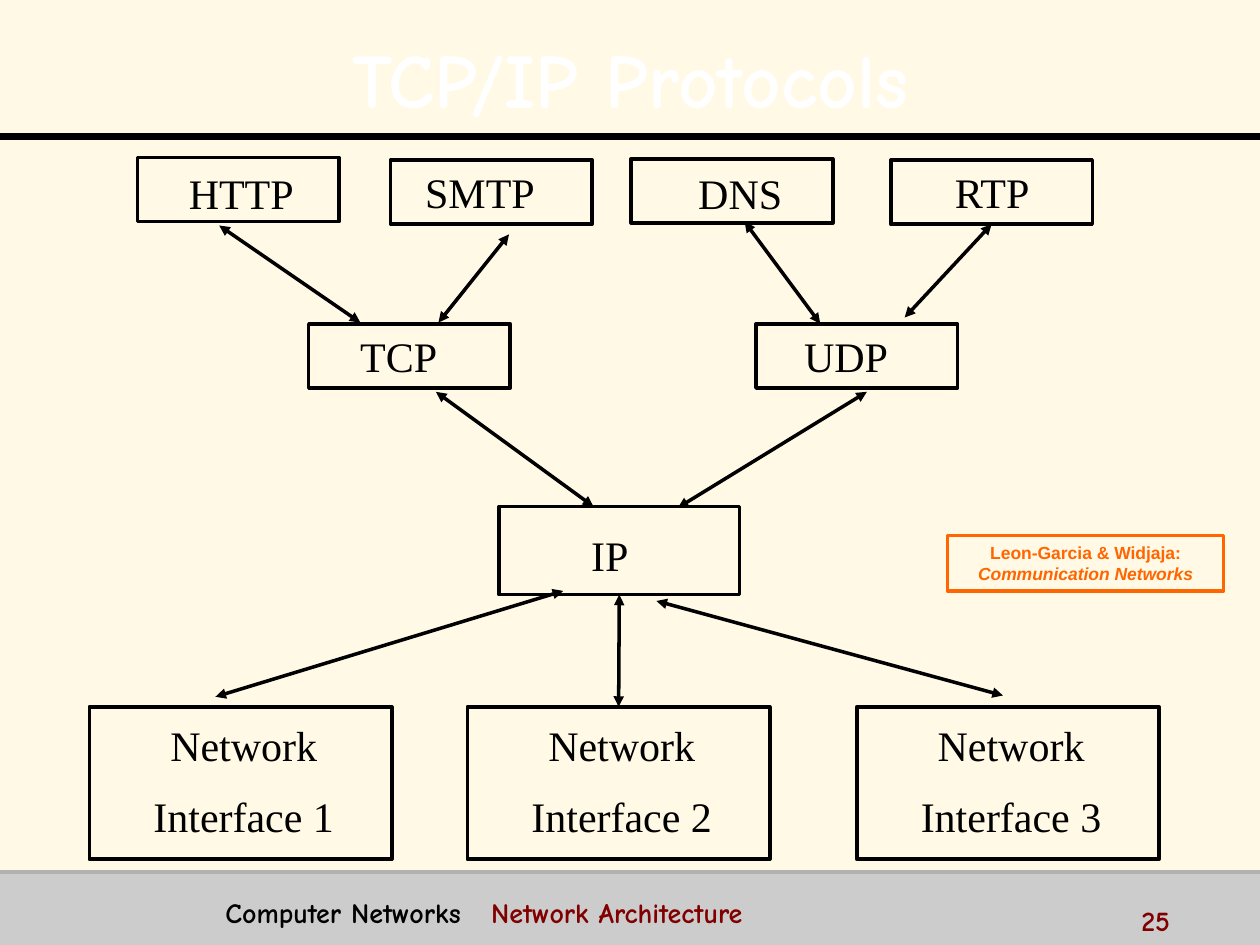
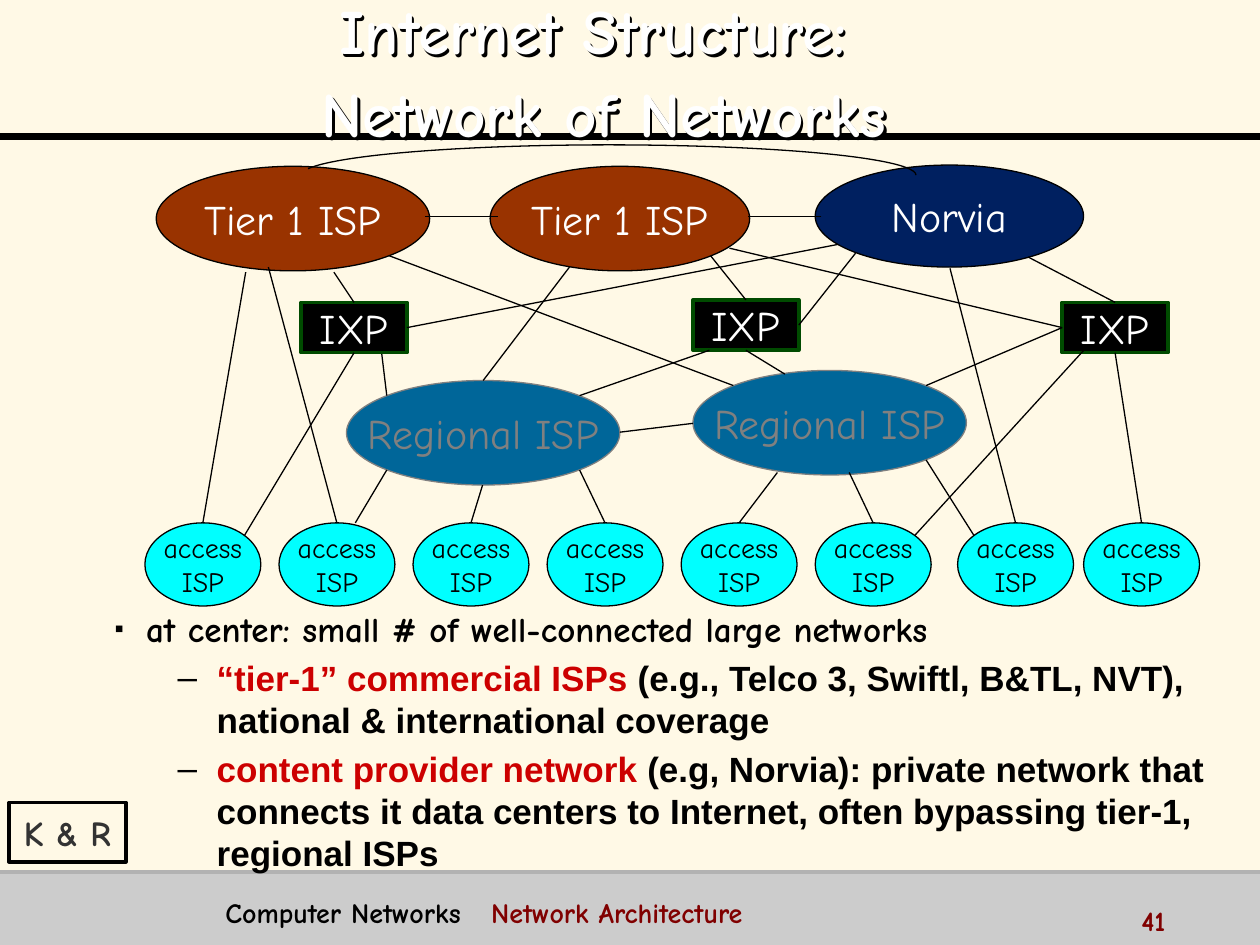
"""Build two computer networks slides: the TCP/IP protocols and the internet structure."""
from dataclasses import dataclass, replace

from lxml import etree
from pptx import Presentation
from pptx import util as u
from pptx.dml.color import RGBColor
from pptx.enum import shapes, text
from pptx.oxml.ns import qn

COLUMNS, ROWS = 100, 75
SLIDE_WIDTH, SLIDE_HEIGHT = u.Inches(10), u.Inches(7.5)
ALIGN, ANCHOR = text.PP_ALIGN, text.MSO_ANCHOR
RECTANGLE, ELLIPSE = shapes.MSO_SHAPE.RECTANGLE, shapes.MSO_SHAPE.OVAL
SIDES = {"top": 0, "left": 1, "bottom": 2, "right": 3}


@dataclass(frozen=True)
class Style:
    """Look of a text run."""
    size: float
    color: str = "000000"
    font: str = "Comic Neue"
    bold: bool = False
    italic: bool = False


@dataclass(frozen=True)
class Theme:
    """Colours and text styles that the slides share."""
    background: str = "FFF9E6"
    black: str = "000000"
    band: str = "CCCCCC"
    band_edge: str = "B2B2B2"
    orange: str = "FF6600"
    tier: str = "993300"
    content: str = "002060"
    regional: str = "006699"
    regional_edge: str = "808080"
    exchange_edge: str = "004B00"
    access: str = "00FFFF"
    title: Style = Style(44, "FFFFFF", bold=True)
    footer: Style = Style(16, bold=True)
    topic: Style = Style(16, "800000", bold=True)
    protocol: Style = Style(24, font="Times New Roman")
    citation: Style = Style(10, "FF6600", "Arial", True)
    provider: Style = Style(24, "FFFFFF")
    small: Style = Style(16)
    source: Style = Style(20, "333333", bold=True)
    point: Style = Style(20, bold=True)
    detail: Style = Style(20, font="Arial", bold=True)
    keyword: Style = Style(20, "CC0000", "Arial", True)


THEME = Theme()


@dataclass(frozen=True)
class Box:
    """Area in grid columns and rows."""
    left: float
    top: float
    width: float
    height: float

    def inner(self, left, top, width, height):
        """Return an area placed relative to this one."""
        return Box(self.left + left, self.top + top, width, height)

    def emu(self):
        """Return left, top, width and height as slide lengths."""
        return (*grid_point(self.left, self.top), *grid_point(self.width, self.height))


def grid_point(column, row):
    """Turn a column and a row into slide lengths."""
    return u.Emu(round(column * SLIDE_WIDTH / COLUMNS)), u.Emu(round(row * SLIDE_HEIGHT / ROWS))


def rgb(color):
    """Return a colour object for a hex string."""
    return RGBColor.from_string(color)


def format_run(run, style):
    """Apply a text style to a run."""
    font = run.font
    font.size, font.name = u.Pt(style.size), style.font
    font.bold, font.italic = style.bold, style.italic
    font.color.rgb = rgb(style.color)


def write(frame, lines, style, align=ALIGN.CENTER, anchor=ANCHOR.MIDDLE, wrap=False, gap=0):
    """Fill a text frame with equally styled lines."""
    frame.text = "\n".join(lines)
    frame.auto_size = text.MSO_AUTO_SIZE.NONE
    frame.word_wrap, frame.vertical_anchor = wrap, anchor
    for index, paragraph in enumerate(frame.paragraphs):
        paragraph.alignment = align
        paragraph.space_before = u.Pt(gap if index else 0)
        for run in paragraph.runs:
            format_run(run, style)


def add_runs(paragraph, parts):
    """Append (words, style) parts to a paragraph."""
    for words, style in parts:
        run = paragraph.add_run()
        run.text = words
        format_run(run, style)


def add_label(slide, box, lines, style, **options):
    """Add a text box."""
    shape = slide.shapes.add_textbox(*box.emu())
    write(shape.text_frame, lines, style, **options)
    return shape


def add_figure(slide, kind, box, fill=None, line=THEME.black, weight=2.0):
    """Add a flat preset shape."""
    shape = slide.shapes.add_shape(kind, *box.emu())
    shape.shadow.inherit = False
    if fill:
        shape.fill.solid()
        shape.fill.fore_color.rgb = rgb(fill)
    else:
        shape.fill.background()
    if line:
        shape.line.color.rgb = rgb(line)
        shape.line.width = u.Pt(weight)
    else:
        shape.line.fill.background()
    return shape


def add_line(slide, box, start, end, nodes=None, color=THEME.black, weight=0.75, arrows=False):
    """Connect two ends, each a point or the words 'node side'."""
    ends = [(0, 0) if isinstance(target, str) else grid_point(box.left + target[0], box.top + target[1])
            for target in (start, end)]
    connector = slide.shapes.add_connector(shapes.MSO_CONNECTOR.STRAIGHT, *ends[0], *ends[1])
    for target, join in ((start, connector.begin_connect), (end, connector.end_connect)):
        if isinstance(target, str):
            name, side = target.rsplit(" ", 1)
            join(nodes[name], SIDES[side])
    connector.line.color.rgb = rgb(color)
    connector.line.width = u.Pt(weight)
    properties = connector._element.spPr
    if arrows:
        for tag in ("a:headEnd", "a:tailEnd"):
            etree.SubElement(properties.find(qn("a:ln")), qn(tag), type="triangle")
    etree.SubElement(properties, qn("a:effectLst"))


def place_placeholder(slide, placeholder, box):
    """Move a placeholder to its box, in front of what is drawn so far."""
    placeholder.left, placeholder.top, placeholder.width, placeholder.height = box.emu()
    slide.shapes._spTree.append(placeholder._element)


def place_title(slide, box, words, style, anchor, shadow=False):
    """Move and format the title placeholder."""
    title = slide.shapes.title
    place_placeholder(slide, title, box)
    write(title.text_frame, [words], style, anchor=anchor, wrap=True)
    title.text_frame.paragraphs[0].line_spacing = 1.1
    if shadow:
        title.fill.background()
        title.line.fill.background()
        effects = etree.SubElement(title._element.spPr, qn("a:effectLst"))
        outer = etree.SubElement(effects, qn("a:outerShdw"), dist="25400", dir="2700000",
                                 algn="tl", rotWithShape="0")
        etree.SubElement(outer, qn("a:srgbClr"), val=THEME.black)


def place_frame(slide, box):
    """Draw the background, footer band and rules."""
    slide.background.fill.solid()
    slide.background.fill.fore_color.rgb = rgb(THEME.background)
    add_figure(slide, RECTANGLE, box.inner(0, 69.2, box.width, 5.8), THEME.band, None)
    for row, color, weight in ((10.8, THEME.black, 4), (69.2, THEME.band_edge, 2)):
        add_line(slide, box, (0, row), (box.width, row), color=color, weight=weight)


def place_footer(slide, box, number):
    """Write the course, the topic and the slide number."""
    add_label(slide, box.inner(74.3, 0.6, 10, 2.5), [number], THEME.topic,
              align=ALIGN.LEFT, anchor=ANCHOR.TOP, wrap=True)
    shape = add_label(slide, box.inner(1.6, 0, 71.2, 3.1), [""], THEME.footer,
                      align=ALIGN.LEFT, anchor=ANCHOR.TOP, wrap=True)
    paragraph = shape.text_frame.paragraphs[0]
    tabs = etree.SubElement(paragraph._p.get_or_add_pPr(), qn("a:tabLst"))
    etree.SubElement(tabs, qn("a:tab"), pos=str(u.Inches(2.11)), algn="l")
    add_runs(paragraph, [("Computer Networks\t", THEME.footer),
                         ("Network Architecture", THEME.topic)])


def place_protocols(slide, box):
    """Draw the protocol stack; each label has its own centre."""
    nodes = {}
    small = (16, 5.1)
    for name, left, top, (width, height), center, label_top in (
            ("HTTP", 5.9, 2.5, small, 14.15, 2.8), ("SMTP", 26, 2.7, small, 33.1, 2.7),
            ("DNS", 45.1, 2.6, small, 53.75, 2.8), ("RTP", 65.7, 2.7, small, 73.75, 2.7),
            ("TCP", 19.5, 15.7, small, 26.65, 15.7), ("UDP", 55, 15.7, small, 62.15, 15.7),
            ("IP", 34.6, 30.2, (19.1, 7), 43.4, 31.5)):
        nodes[name] = add_figure(slide, RECTANGLE, box.inner(left, top, width, height))
        add_label(slide, box.inner(center - 5.5, label_top, 11, 5), [name], THEME.protocol)
    for number, left in enumerate((2.1, 32.1, 63), 1):
        name = f"Interface {number}"
        nodes[name] = add_figure(slide, RECTANGLE, box.inner(left, 46.1, 24, 12.1))
        add_label(slide, box.inner(left + 2.55, 46.4, 19.4, 11), ["Network", name],
                  THEME.protocol, wrap=True, gap=12)
    for start, end in (
            ("Interface 2 top", "IP bottom"), ((48.8, 30.3), (63.8, 21.1)),
            ((42.1, 30.2), (29.6, 21.1)), ((66.8, 15.2), "RTP bottom"),
            ((29.8, 15.6), (35.4, 8.6)), ((12.4, 7.9), (23.6, 15.6)),
            ((74.6, 45.2), (47.1, 37.7)), ((12.1, 45.3), (39.7, 36.9)),
            ((60.1, 15.7), (54.1, 7.6))):
        add_line(slide, box, start, end, nodes, weight=2, arrows=True)


def place_citation(slide, box):
    """Add the framed book reference."""
    shape = add_figure(slide, RECTANGLE, box, line=THEME.orange)
    write(shape.text_frame, ["Leon-Garcia & Widjaja:", "Communication Networks"],
          THEME.citation, wrap=True)
    for run in shape.text_frame.paragraphs[1].runs:
        format_run(run, replace(THEME.citation, italic=True))


def place_network(slide, box):
    """Draw the providers, the exchanges and their links."""
    nodes = {}
    access_lefts = [1.5 + 10.64 * index for index in range(6)] + [66, 76]
    faded = replace(THEME.provider, color=THEME.regional_edge)
    for name, label, kind, places, size, fill, line, weight, style in (
            ("access", ["access", "ISP"], ELLIPSE, [(left, 31.5) for left in access_lefts],
             (9.2, 6.6), THEME.access, THEME.black, 0.75, THEME.small),
            ("regional", ["Regional ISP"], ELLIPSE, [(17.5, 20.2), (45, 19.4)],
             (21.7, 8.3), THEME.regional, THEME.regional_edge, 0.75, faded),
            ("IXP", ["IXP"], RECTANGLE, [(13.9, 14), (45, 13.8), (74.3, 14)],
             (8.4, 4), THEME.black, THEME.exchange_edge, 2, THEME.provider),
            ("tier", ["Tier 1 ISP"], ELLIPSE, [(2.4, 3.2)],
             (21.7, 8.3), THEME.tier, THEME.black, 0.75, THEME.provider),
            ("second tier", ["Tier 1 ISP"], ELLIPSE, [(28.9, 3.2)],
             (20.6, 8.3), THEME.tier, THEME.black, 0.75, THEME.provider),
            ("content", ["Norvia"], ELLIPSE, [(54.7, 3.1)],
             (21.3, 8.1), THEME.content, THEME.black, 0.75, THEME.provider)):
        for number, (left, top) in enumerate(places, 1):
            shape = add_figure(slide, kind, box.inner(left, top, *size), fill, line, weight)
            write(shape.text_frame, label, style)
            nodes[f"{name} {number}"] = shape
    for start, end in (
            ((9.5, 11.6), "access 1 top"), ((28.3, 28.5), "access 3 top"),
            ((20.7, 27.3), (18.2, 31.5)), ((11.3, 11.2), "access 2 top"),
            ("IXP 1 bottom", (9.4, 32.5)), ((36, 27.3), "access 4 top"),
            ((45, 23.6), (39.2, 24.3)), ((51.7, 27.5), "access 5 top"),
            ((57.4, 27.5), "access 6 top"), ((63.5, 26.5), (67.3, 32.5)),
            ((65.4, 11.3), "access 7 top"), ((29.5, 7.2), (23.7, 7.2)),
            ((55.2, 7.2), (49.4, 7.2)), ((71.6, 10.4), "IXP 3 top"),
            ((16.5, 11.6), "IXP 1 top"), ((20.3, 18.1), (20.7, 21.4)),
            ((56.5, 9.4), "IXP 1 right"), ((46.4, 10.3), "IXP 2 top"),
            ((35.2, 11.2), "regional 1 top"), ("IXP 2 bottom", (52.3, 19.7)),
            ((46.3, 17.8), (36, 21.4)), ((20.9, 10.3), (48.2, 20.6)),
            ("IXP 3 bottom", "access 8 top"), ((76.2, 17.6), (62.6, 32.5)),
            ("IXP 3 left", (63.5, 20.6)), ((57.9, 10.1), "IXP 2 right"),
            ((47.9, 9.7), "IXP 3 left")):
        add_line(slide, box, start, end, nodes)
    arc = add_figure(slide, shapes.MSO_SHAPE.ARC, box.inner(13.9, 1.5, 48.8, 4.8), weight=0.75)
    arc.adjustments[0], arc.adjustments[1] = 108.73, 0


def place_points(slide, box):
    """Fill the body placeholder with a point and its details."""
    body = slide.placeholders[1]
    place_placeholder(slide, body, box)
    frame = body.text_frame
    frame.auto_size, frame.vertical_anchor = text.MSO_AUTO_SIZE.NONE, ANCHOR.TOP
    for index, (level, parts) in enumerate((
            (0, [("at center: small # of well-connected large networks", THEME.point)]),
            (1, [("“tier-1” commercial ISPs ", THEME.keyword),
                 ("(e.g., Telco 3, Swiftl, B&TL, NVT), national & international coverage",
                  THEME.detail)]),
            (1, [("content provider network ", THEME.keyword),
                 ("(e.g, Norvia): private network that connects it data centers to Internet, "
                  "often bypassing tier-1, regional ISPs", THEME.detail)]))):
        paragraph = frame.add_paragraph() if index else frame.paragraphs[0]
        margin, hanging, mark, size = ((0.25, 0.25, "▪", 75), (0.81, 0.31, "–", 100))[level]
        properties = paragraph._p.get_or_add_pPr()
        properties.set("marL", str(u.Inches(margin)))
        properties.set("indent", str(-u.Inches(hanging)))
        color = etree.SubElement(properties, qn("a:buClr"))
        etree.SubElement(color, qn("a:srgbClr"), val=THEME.black)
        etree.SubElement(properties, qn("a:buSzPct"), val=str(size * 1000))
        etree.SubElement(properties, qn("a:buFont"), typeface="Arial")
        etree.SubElement(properties, qn("a:buChar"), char=mark)
        paragraph.level, paragraph.alignment = level, ALIGN.LEFT
        paragraph.space_before = u.Pt(4 if index else 0)
        paragraph.line_spacing = 1.0
        add_runs(paragraph, parts)


def build_protocols(presentation, page):
    """Build the TCP/IP protocols slide."""
    slide = presentation.slides.add_slide(presentation.slide_layouts[5])
    place_frame(slide, page)
    place_protocols(slide, page.inner(5, 10, 90, 59))
    place_citation(slide, page.inner(75.2, 42.5, 21.9, 4.4))
    place_title(slide, page.inner(2, 1.3, 96.1, 8.7), "TCP/IP Protocols", THEME.title, ANCHOR.TOP)
    place_footer(slide, page.inner(15.3, 70.6, 84.3, 3.1), "25")


def build_structure(presentation, page):
    """Build the internet structure slide."""
    slide = presentation.slides.add_slide(presentation.slide_layouts[1])
    place_frame(slide, page)
    place_points(slide, page.inner(8.1, 47.7, 91.5, 24.6))
    place_network(slide, page.inner(10, 10, 86, 38))
    place_title(slide, page.inner(2.8, 1.8, 88.5, 7.1), "Internet Structure:\v Network of Networks",
                replace(THEME.title, size=36), ANCHOR.MIDDLE, shadow=True)
    source = add_figure(slide, RECTANGLE, page.inner(0.7, 63.7, 9.3, 4.7))
    write(source.text_frame, ["K & R"], THEME.source)
    place_footer(slide, page.inner(15.3, 70.6, 84.3, 3.1), "41")


def main():
    """Build and save the presentation."""
    presentation = Presentation()
    presentation.slide_width, presentation.slide_height = SLIDE_WIDTH, SLIDE_HEIGHT
    page = Box(0, 0, COLUMNS, ROWS)
    build_protocols(presentation, page)
    build_structure(presentation, page)
    presentation.save("out.pptx")


if __name__ == "__main__":
    main()
